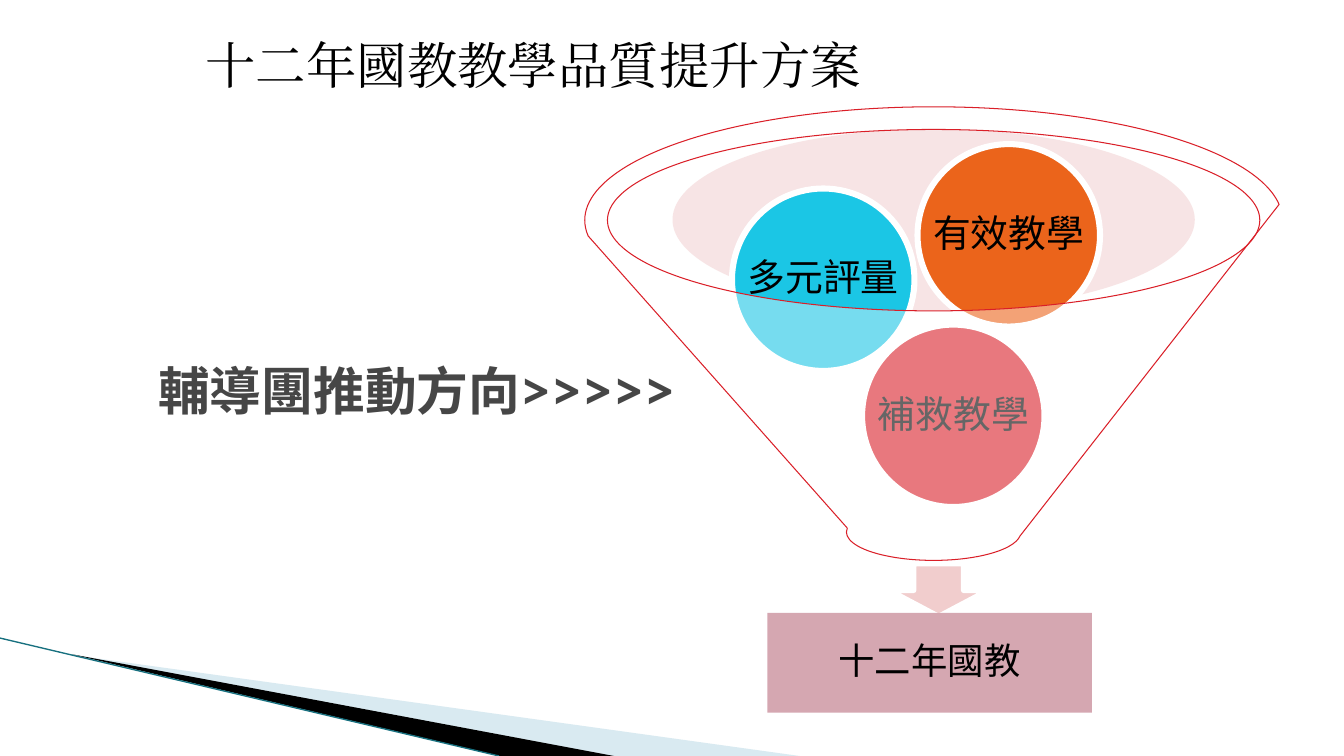
from lxml import etree
from pptx import Presentation
from pptx.dml.color import RGBColor
from pptx.enum import shapes, text
from pptx.oxml.ns import qn
from pptx.util import Inches, Pt

BLACK = RGBColor(0x00, 0x00, 0x00)
WHITE = RGBColor(0xFF, 0xFF, 0xFF)
GRAY = RGBColor(0x46, 0x46, 0x46)
RED = RGBColor(0xDA, 0x1F, 0x28)
CYAN = RGBColor(0x1B, 0xC6, 0xE5)
ORANGE = RGBColor(0xEB, 0x64, 0x1B)
ROSE = RGBColor(0xD5, 0xA7, 0xB1)
PALE_RED = RGBColor(0xED, 0xBD, 0xBE)
ARROW_PINK = RGBColor(0xF1, 0xCD, 0xCD)
PALE_BLUE = RGBColor(0xA0, 0xCB, 0xDC)
TEAL = RGBColor(0x17, 0x70, 0x7F)

SANS = "Noto Sans Mono"
SERIF = "TeX Gyre Pagella"
SHAPE = shapes.MSO_SHAPE


class FunnelPage:
    """Style of the deck and the page being drawn."""

    def __init__(self, deck):
        self.page = deck.slides.add_slide(deck.slide_layouts[5])
        self.shapes = self.page.shapes

    def place(self, item, at):
        for name, value in zip(("left", "top", "width", "height"), at):
            setattr(item, name, Inches(value))

    def paint(self, shape, fill, alpha=None, line=None, weight=0.75):
        shape.shadow.inherit = False
        shape.fill.solid()
        shape.fill.fore_color.rgb = fill
        if alpha:
            color = shape.fill._xPr.find(qn("a:solidFill"))[0]
            etree.SubElement(color, qn("a:alpha")).set("val", str(alpha * 1000))
        if line is None:
            shape.line.fill.background()
        else:
            shape.line.color.rgb = line
            shape.line.width = Pt(weight)

    def set_text(self, box, words, size, font=SANS, color=BLACK, bold=False,
                 align=text.PP_ALIGN.LEFT, spacing=1.0, **frame_format):
        frame = box.text_frame
        for name, value in frame_format.items():
            setattr(frame, name, value)
        para = frame.paragraphs[0]
        para.alignment, para.line_spacing = align, spacing
        span = para.add_run()
        span.text = words
        span.font.color.rgb = color
        for name, value in {"size": Pt(size), "name": font, "bold": bold}.items():
            setattr(span.font, name, value)
        east_asian = etree.SubElement(span.font._element, qn("a:ea"))
        east_asian.set("typeface", font)

    def title(self, words, at, size):
        box = self.shapes.title
        self.place(box, at)
        self.set_text(box, words, size, color=GRAY, bold=True, word_wrap=True,
                      auto_size=text.MSO_AUTO_SIZE.NONE,
                      vertical_anchor=text.MSO_ANCHOR.MIDDLE)

    def heading(self, words, at, size):
        box = self.shapes.add_textbox(*map(Inches, at))
        self.set_text(box, words, size, font=SERIF, word_wrap=False,
                      auto_size=text.MSO_AUTO_SIZE.SHAPE_TO_FIT_TEXT)

    def shape(self, kind, at, fill, **look):
        shape = self.shapes.add_shape(kind, *map(Inches, at))
        self.paint(shape, fill, **look)
        return shape

    def labelled(self, kind, at, words, size, fill, **look):
        self.set_text(self.shape(kind, at, fill, **look), words, size,
                      align=text.PP_ALIGN.CENTER, spacing=0.9, word_wrap=False,
                      vertical_anchor=text.MSO_ANCHOR.MIDDLE)

    def wedge(self, points, fill, alpha=None):
        corners = [(Inches(x), Inches(y)) for x, y in points]
        builder = self.shapes.build_freeform(*corners[0])
        builder.add_line_segments(corners[1:], close=True)
        self.paint(builder.convert_to_shape(), fill, alpha)

    def line(self, start, end, color, weight):
        line = self.shapes.add_connector(
            shapes.MSO_CONNECTOR.STRAIGHT, *map(Inches, start + end))
        line.line.color.rgb = color
        line.line.width = Pt(weight)
        etree.SubElement(line._element.spPr, qn("a:effectLst"))


def main():
    deck = Presentation()
    deck.slide_width, deck.slide_height = Inches(13.33), Inches(7.5)
    page = FunnelPage(deck)

    page.wedge([(0.73, 6.5), (7.93, 7.5), (6.08, 7.5)], PALE_BLUE, alpha=40)
    page.wedge([(0.71, 6.49), (6.09, 7.5), (4.96, 7.5)], BLACK)
    page.line((0, 6.33), (4.95, 7.5), TEAL, 0.95)

    page.title("輔導團推動方向>>>>>", (1.47, 3.2, 6.14, 1.33), 36.9)

    outline = {"line": WHITE, "weight": 4.33}
    page.shape(SHAPE.OVAL, (6.67, 1.28, 5.18, 1.8), PALE_RED, alpha=40)
    page.shape(SHAPE.DOWN_ARROW, (8.81, 5.59, 1, 0.53), ARROW_PINK, **outline)
    page.labelled(SHAPE.RECTANGLE, (7.61, 6.08, 3.22, 0.99), "十二年國教", 26, ROSE)

    diameter = 1.81
    for words, left, top, fill in (("補救教學", 8.55, 3.22, RED),
                                   ("多元評量", 7.26, 1.87, CYAN),
                                   ("有效教學", 9.1, 1.43, ORANGE)):
        page.labelled(SHAPE.OVAL, (left, top, diameter, diameter), words, 27,
                      fill, **outline)
    page.shape(SHAPE.FUNNEL, (5.8, 1.06, 6.92, 4.5), WHITE, alpha=40, line=RED)

    page.heading("十二年國教教學品質提升方案", (1.94, 0.29, 6.77, 0.71), 36)
    deck.save("out.pptx")


if __name__ == "__main__":
    main()
